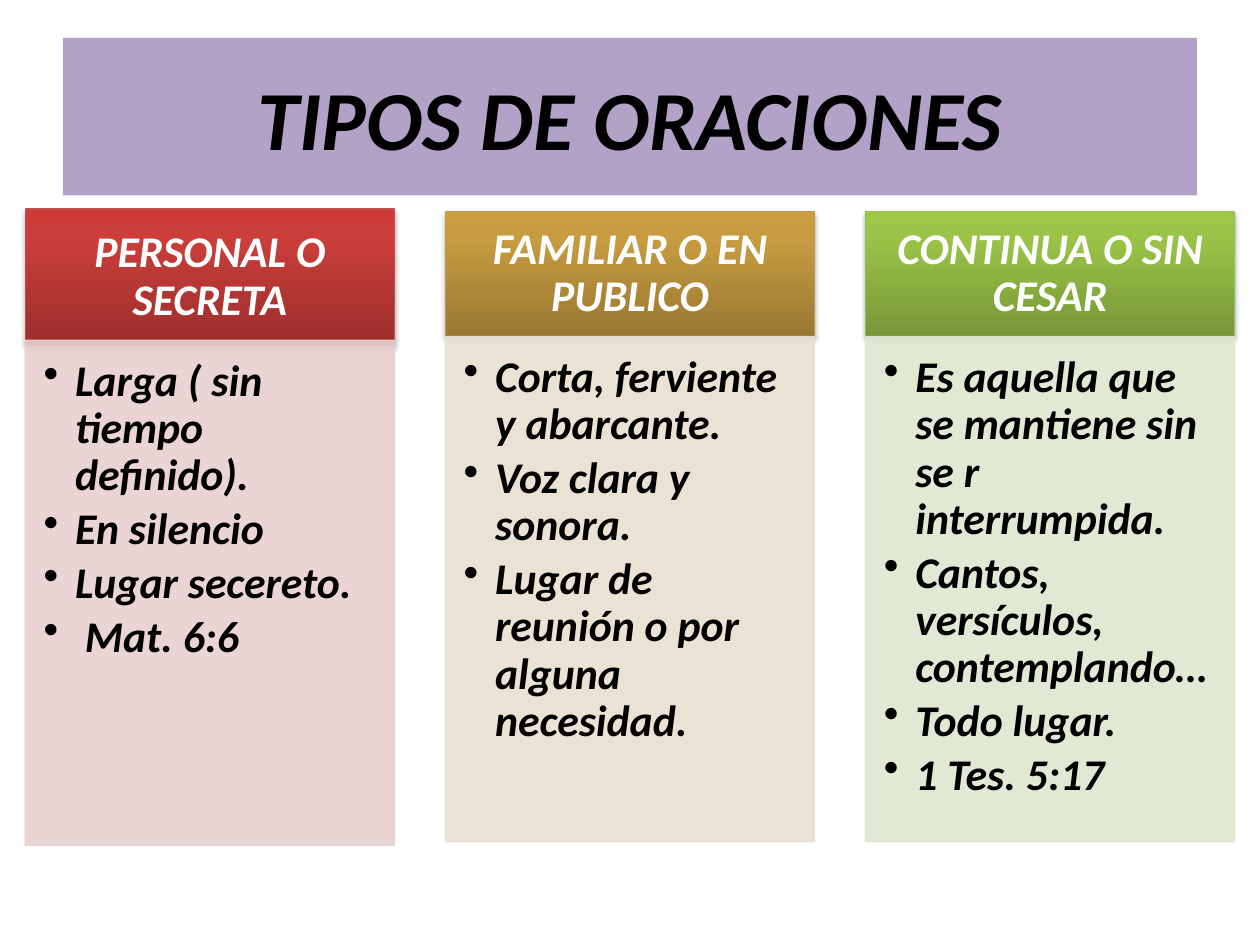
from copy import deepcopy

from lxml import etree
from pptx import Presentation
from pptx.dml.color import RGBColor
from pptx.enum.shapes import MSO_SHAPE
from pptx.enum.text import MSO_ANCHOR, PP_ALIGN
from pptx.oxml.ns import qn
from pptx.util import Pt

RECTANGLE = MSO_SHAPE.RECTANGLE
TOP, MIDDLE = MSO_ANCHOR.TOP, MSO_ANCHOR.MIDDLE
LEFT, CENTER = PP_ALIGN.LEFT, PP_ALIGN.CENTER

FIRST_LEFT, PITCH, COLUMN_WIDTH = 14.4, 240.1, 211
BODY_HEIGHT = 288.7
TEXT_SIZE = 25

# heading, header top, header height, body top, gradient, border, body fill, items
COLUMNS = [
    ("PERSONAL O SECRETA", 119.5, 77.8, 194.4,
     ("9C2F2D", "CB3E3A", "CE3B37"), "C0504D", "E8D0D0",
     ["Larga ( sin tiempo definido).", "En silencio", "Lugar secereto.",
      " Mat. 6:6"]),
    ("FAMILIAR O EN PUBLICO", 121, 71.3, 192.3,
     ("997832", "C79C41", "CB9D3F"), "BD9B53", "E8E1D1",
     ["Corta, ferviente y abarcante.", "Voz clara y sonora.",
      "Lugar de reunión o por alguna necesidad."]),
    ("CONTINUA O SIN CESAR", 121, 71.3, 192.3,
     ("779737", "9BC348", "9DC746"), "9BBB59", "DEE7D1",
     ["Es aquella que se mantiene sin se r interrumpida.",
      "Cantos, versículos, contemplando…", "Todo lugar.", "1 Tes. 5:17"]),
]


def color(hex_code):
    return RGBColor.from_string(hex_code)


def add_box(page, left, top, width, height):
    box = page.shapes.add_shape(RECTANGLE, Pt(left), Pt(top), Pt(width), Pt(height))
    box.shadow.inherit = False
    return box


def set_border(box, hex_code):
    box.line.color.rgb = color(hex_code)
    box.line.width = Pt(0.75)


def set_gradient(box, hex_codes):
    """Fill from bottom to top with three stops."""
    box.fill.gradient()
    stop_list = box._element.spPr.find(".//" + qn("a:gsLst"))
    stop_list.append(deepcopy(stop_list[-1]))
    for stop, hex_code, position in zip(box.fill.gradient_stops, hex_codes, (0, 0.8, 1)):
        stop.color.rgb = color(hex_code)
        stop.position = position
    box.fill.gradient_angle = 90


def add_shadow(box):
    effects = box._element.spPr.find(qn("a:effectLst"))
    shadow = etree.SubElement(
        effects, qn("a:outerShdw"), blurRad=str(Pt(3.1)), dist=str(Pt(1.8)),
        dir="5400000", rotWithShape="0")
    shade = etree.SubElement(shadow, qn("a:srgbClr"), val="000000")
    etree.SubElement(shade, qn("a:alpha"), val="35000")


def make_translucent(box):
    """Set fill and line to 90 % opacity."""
    for shade in box._element.spPr.iter(qn("a:srgbClr")):
        etree.SubElement(shade, qn("a:alpha"), val="90000")


def add_bullet(para):
    properties = para._p.get_or_add_pPr()
    properties.set("marL", str(Pt(18)))
    properties.set("indent", str(Pt(-18)))
    etree.SubElement(properties, qn("a:buChar"), char="•")


def write(box, lines, size, hex_code, anchor, align, margins, spacing=0.9, bullets=False):
    frame = box.text_frame
    frame.word_wrap = True
    frame.vertical_anchor = anchor
    (frame.margin_left, frame.margin_top,
     frame.margin_right, frame.margin_bottom) = map(Pt, margins)
    for index, line in enumerate(lines):
        para = frame.add_paragraph() if index else frame.paragraphs[0]
        para.add_run().text = line
        if bullets:
            add_bullet(para)
        para.alignment = align
        para.line_spacing = spacing
        para.space_after = Pt(3.75 if bullets else 0)
        font = para.font
        font.name, font.size = "Calibri", Pt(size)
        font.bold = font.italic = True
        font.color.rgb = color(hex_code)


def add_title(page):
    box = add_box(page, 36, 21.6, 648, 90)
    box.fill.solid()
    box.fill.fore_color.rgb = color("B3A2C7")
    box.line.fill.background()
    write(box, ["TIPOS DE ORACIONES"], 48, "000000", MIDDLE, CENTER,
          (7.2, 3.6, 7.2, 3.6), spacing=1.0)


def add_header(page, left, top, height, heading, gradient, border):
    box = add_box(page, left, top, COLUMN_WIDTH, height)
    set_gradient(box, gradient)
    set_border(box, border)
    add_shadow(box)
    write(box, [heading], TEXT_SIZE, "FFFFFF", MIDDLE, CENTER, (14, 8, 14, 8))


def add_body(page, left, top, fill, items):
    box = add_box(page, left, top, COLUMN_WIDTH, BODY_HEIGHT)
    box.fill.solid()
    box.fill.fore_color.rgb = color(fill)
    set_border(box, fill)
    make_translucent(box)
    write(box, items, TEXT_SIZE, "000000", TOP, LEFT, (10.5, 10.5, 14, 15.8),
          bullets=True)


def main():
    deck = Presentation()
    deck.slide_width, deck.slide_height = Pt(720), Pt(540)
    page = deck.slides.add_slide(deck.slide_layouts[6])
    add_title(page)
    for index, column in enumerate(COLUMNS):
        heading, top, height, body_top, gradient, border, fill, items = column
        left = FIRST_LEFT + index * PITCH
        add_header(page, left, top, height, heading, gradient, border)
        add_body(page, left, body_top, fill, items)
    deck.save("out.pptx")


if __name__ == "__main__":
    main()
